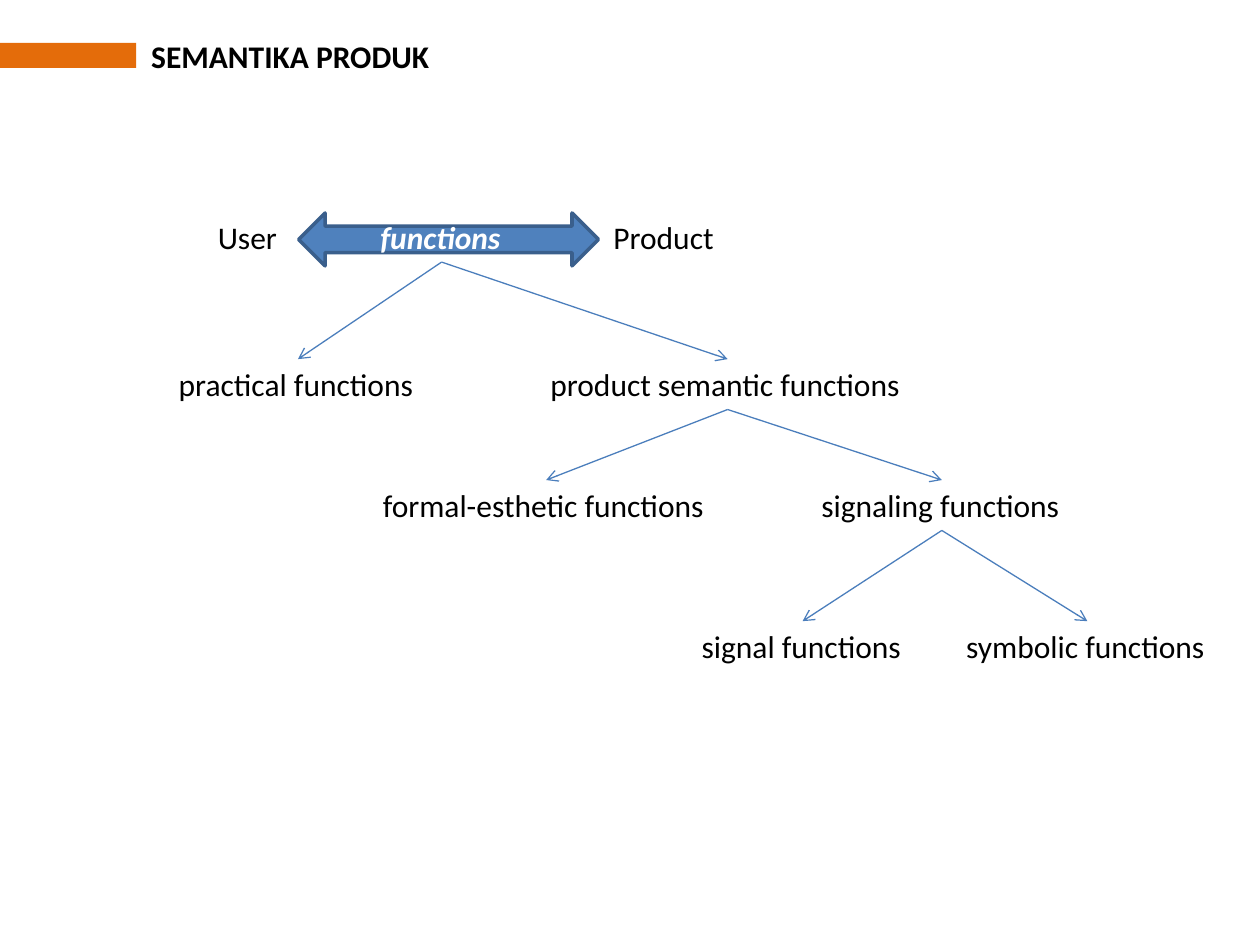
from pptx import Presentation
from pptx.dml.color import RGBColor
from pptx.enum.shapes import MSO_CONNECTOR, MSO_SHAPE
from pptx.enum.text import MSO_ANCHOR, MSO_AUTO_SIZE, PP_ALIGN
from pptx.oxml.ns import qn
from pptx.util import Inches, Pt
from lxml.etree import SubElement

BLACK = RGBColor(0x00, 0x00, 0x00)
WHITE = RGBColor(0xFF, 0xFF, 0xFF)
ORANGE = RGBColor(0xE4, 0x6C, 0x0A)
BLUE = RGBColor(0x4F, 0x81, 0xBD)
DARK_BLUE = RGBColor(0x3A, 0x5F, 0x8C)
LINE_BLUE = RGBColor(0x4B, 0x7E, 0xBC)

COLUMNS, ROWS = 100, 75
TEXT_HEIGHT = 4
BOTTOM, TOP = 2, 0


class FunctionTree:
    font = "Calibri"
    size = Pt(18)

    def __init__(self, deck):
        self.deck = deck
        self.page = deck.slides.add_slide(deck.slide_layouts[5])

    def area(self, column, row, width, height):
        """Turn grid cells into slide lengths."""
        across = self.deck.slide_width / COLUMNS
        down = self.deck.slide_height / ROWS
        return [round(n) for n in
                (column * across, row * down, width * across, height * down)]

    def fill_text(self, box, text, color=BLACK, bold=False, italic=False):
        frame = box.text_frame
        frame.word_wrap = False
        frame.auto_size = MSO_AUTO_SIZE.SHAPE_TO_FIT_TEXT
        frame.vertical_anchor = MSO_ANCHOR.TOP
        para = frame.paragraphs[0]
        para.alignment = PP_ALIGN.LEFT
        span = para.add_run()
        span.text = text
        span.font.name, span.font.size = self.font, self.size
        span.font.bold, span.font.italic = bold, italic
        span.font.color.rgb = color

    def title(self, text, column, row, width):
        box = self.page.shapes.title
        box.left, box.top, box.width, box.height = self.area(
            column, row, width, TEXT_HEIGHT)
        self.fill_text(box, text, bold=True)

    def label(self, text, column, row, width, **style):
        box = self.page.shapes.add_textbox(
            *self.area(column, row, width, TEXT_HEIGHT))
        self.fill_text(box, text, **style)
        return box

    def shape(self, kind, column, row, width, height, fill, line=None):
        shape = self.page.shapes.add_shape(
            kind, *self.area(column, row, width, height))
        shape.shadow.inherit = False
        shape.fill.solid()
        shape.fill.fore_color.rgb = fill
        if line is None:
            shape.line.fill.background()
        else:
            shape.line.color.rgb = line
            shape.line.width = Pt(2)

    def branch(self, parent, *children):
        """Draw an arrow from the parent down to each child."""
        for child in children:
            arrow = self.page.shapes.add_connector(
                MSO_CONNECTOR.STRAIGHT, 0, 0, 0, 0)
            arrow.begin_connect(parent, BOTTOM)
            arrow.end_connect(child, TOP)
            arrow.line.color.rgb = LINE_BLUE
            arrow.line.width = Pt(0.75)
            properties = arrow._element.spPr
            SubElement(properties.find(qn("a:ln")), qn("a:tailEnd"), type="arrow")
            SubElement(properties, qn("a:effectLst"))


def main():
    deck = Presentation()
    deck.slide_width, deck.slide_height = Inches(10), Inches(7.5)
    tree = FunctionTree(deck)

    tree.title("SEMANTIKA PRODUK", 11, 2.4, 24.3)
    tree.shape(MSO_SHAPE.RECTANGLE, 0, 3.4, 10.8, 2, ORANGE)
    tree.shape(MSO_SHAPE.LEFT_RIGHT_ARROW, 23.7, 16.9, 23.8, 4.2, BLUE, DARK_BLUE)

    tree.label("User", 16.3, 16.8, 6.8)
    functions = tree.label("functions", 29.2, 16.8, 11.7,
                           color=WHITE, bold=True, italic=True)
    tree.label("Product", 47.7, 16.8, 10.1)
    practical = tree.label("practical functions", 13.2, 28.5, 20.9)
    semantic = tree.label("product semantic functions", 42.7, 28.5, 30.1)
    formal = tree.label("formal-esthetic functions", 29.4, 38.1, 27.9)
    signaling = tree.label("signaling functions", 64.2, 38.1, 21.1)
    signal = tree.label("signal functions", 54.7, 49.3, 18)
    symbolic = tree.label("symbolic functions", 75.7, 49.3, 21.2)

    tree.branch(functions, practical, semantic)
    tree.branch(semantic, formal, signaling)
    tree.branch(signaling, signal, symbolic)

    deck.save("out.pptx")


if __name__ == "__main__":
    main()
